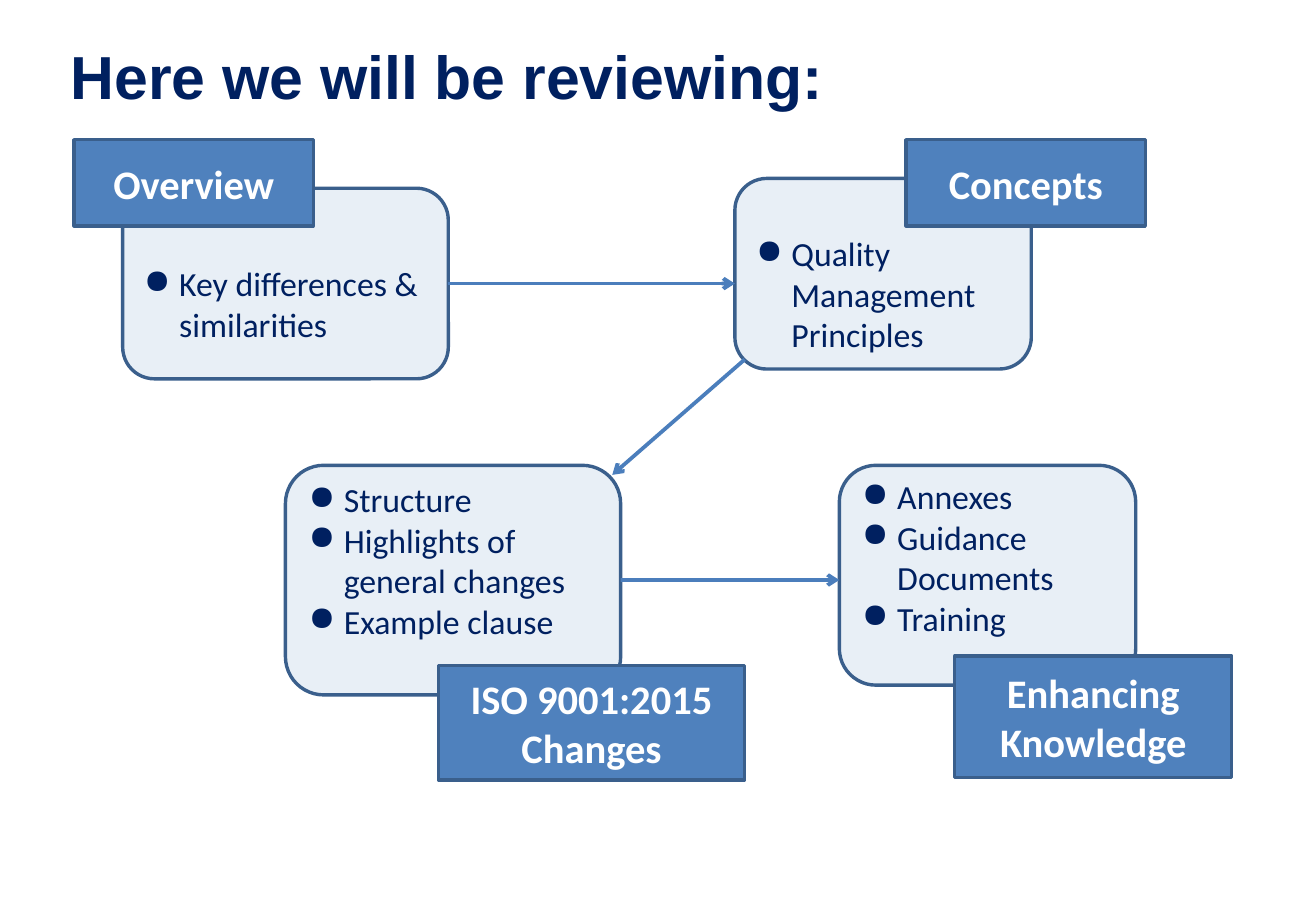
from lxml.etree import SubElement
from pptx import Presentation
from pptx.dml.color import RGBColor
from pptx.enum.shapes import MSO_CONNECTOR as CONN, MSO_SHAPE as SHAPE
from pptx.enum.text import MSO_ANCHOR as ANCHOR, PP_ALIGN as ALIGN
from pptx.oxml.ns import qn
from pptx.util import Pt

RIGHT_SIDE = 3


def rgb(code):
    return RGBColor.from_string(code)


class Board:
    navy, white = "002060", "FFFFFF"
    label_fill, panel_fill = "4F81BD", "DCE6F2"
    border, arrow_color = "3A5F8C", "4B7EBC"
    font, title_font = "Calibri", "Arial"
    indent = 20.9

    def __init__(self, slide):
        self.shapes = slide.shapes

    def run(self, p, text, size, color, bold=False, font=None):
        r = p.add_run()
        r.text = text
        r.font.name = font or self.font
        r.font.size = Pt(size)
        r.font.bold = bold
        r.font.color.rgb = rgb(color)

    def title(self, text, box):
        tf = self.shapes.add_textbox(*map(Pt, box)).text_frame
        tf.word_wrap = True
        tf.vertical_anchor = ANCHOR.MIDDLE
        p = tf.paragraphs[0]
        p.alignment = ALIGN.CENTER
        self.run(p, text, 36, self.navy, True, self.title_font)

    def block(self, kind, box, fill):
        """Add a filled, bordered shape without shadow."""
        sp = self.shapes.add_shape(kind, *map(Pt, box))
        sp.shadow.inherit = False
        sp.fill.solid()
        sp.fill.fore_color.rgb = rgb(fill)
        sp.line.color.rgb = rgb(self.border)
        sp.line.width = Pt(2)
        sp.text_frame.word_wrap = True
        return sp

    def panel(self, box, items, inset):
        """Add a translucent rounded panel with bulleted items."""
        sp = self.block(SHAPE.ROUNDED_RECTANGLE, box, self.panel_fill)
        color = sp.fill._xPr.find(qn("a:solidFill"))[0]
        SubElement(color, qn("a:alpha"), val="63000")
        tf = sp.text_frame
        tf.vertical_anchor = ANCHOR.TOP
        tf.margin_top = Pt(inset)
        for i, item in enumerate(items):
            p = tf.add_paragraph() if i else tf.paragraphs[0]
            p.alignment = ALIGN.LEFT
            pPr = p._p.get_or_add_pPr()
            pPr.set("marL", str(Pt(self.indent)))
            pPr.set("indent", str(-Pt(self.indent)))
            SubElement(pPr, qn("a:buChar"), char="●")
            self.run(p, item, 20, self.navy)
        return sp

    def label(self, box, text):
        sp = self.block(SHAPE.RECTANGLE, box, self.label_fill)
        sp.text_frame.vertical_anchor = ANCHOR.MIDDLE
        p = sp.text_frame.paragraphs[0]
        p.alignment = ALIGN.CENTER
        self.run(p, text, 24, self.white, True)

    def arrow(self, start, end, source=None):
        """Add an arrow, joined to the right side of source if given."""
        cx = self.shapes.add_connector(CONN.STRAIGHT, *map(Pt, start + end))
        if source is not None:
            cx.begin_connect(source, RIGHT_SIDE)
        cx.line.color.rgb = rgb(self.arrow_color)
        cx.line.width = Pt(2.25)
        SubElement(cx.line._get_or_add_ln(), qn("a:tailEnd"), type="arrow")
        SubElement(cx._element.spPr, qn("a:effectLst"))


# panel box, items, top inset, label box, label text
TOPICS = [
    ((72.7, 111.6, 193, 113), ["Key differences & similarities"], 38.8,
     (43.9, 82.8, 141.8, 51.1), "Overview"),
    ((435.6, 105.8, 175.7, 113), ["Quality Management Principles"], 26.8,
     (537.1, 82.8, 141.8, 51.1), "Concepts"),
    ((169.2, 275.8, 198.7, 136.1),
     ["Structure", "Highlights of general changes", "Example clause"], 1.5,
     (259.9, 394.6, 181.4, 67.7), "ISO 9001:2015 Changes"),
    ((497.5, 275.8, 175.7, 130.3),
     ["Annexes", "Guidance Documents", "Training"], 0,
     (565.9, 388.8, 164.2, 72), "Enhancing Knowledge"),
]


def main():
    prs = Presentation()
    prs.slide_width, prs.slide_height = Pt(780), Pt(540)
    board = Board(prs.slides.add_slide(prs.slide_layouts[6]))
    board.title("Here we will be reviewing:", (22, 0, 486, 89))

    panels = []
    for panel_box, items, inset, label_box, text in TOPICS:
        panels.append(board.panel(panel_box, items, inset))
        board.label(label_box, text)
    overview, _, changes, _ = panels

    board.arrow((265.7, 168.1), (435.6, 168.1), overview)
    board.arrow((441.4, 213.1), (362.9, 281.5))
    board.arrow((367.9, 343.8), (497.5, 343.8), changes)
    prs.save("out.pptx")


if __name__ == "__main__":
    main()
